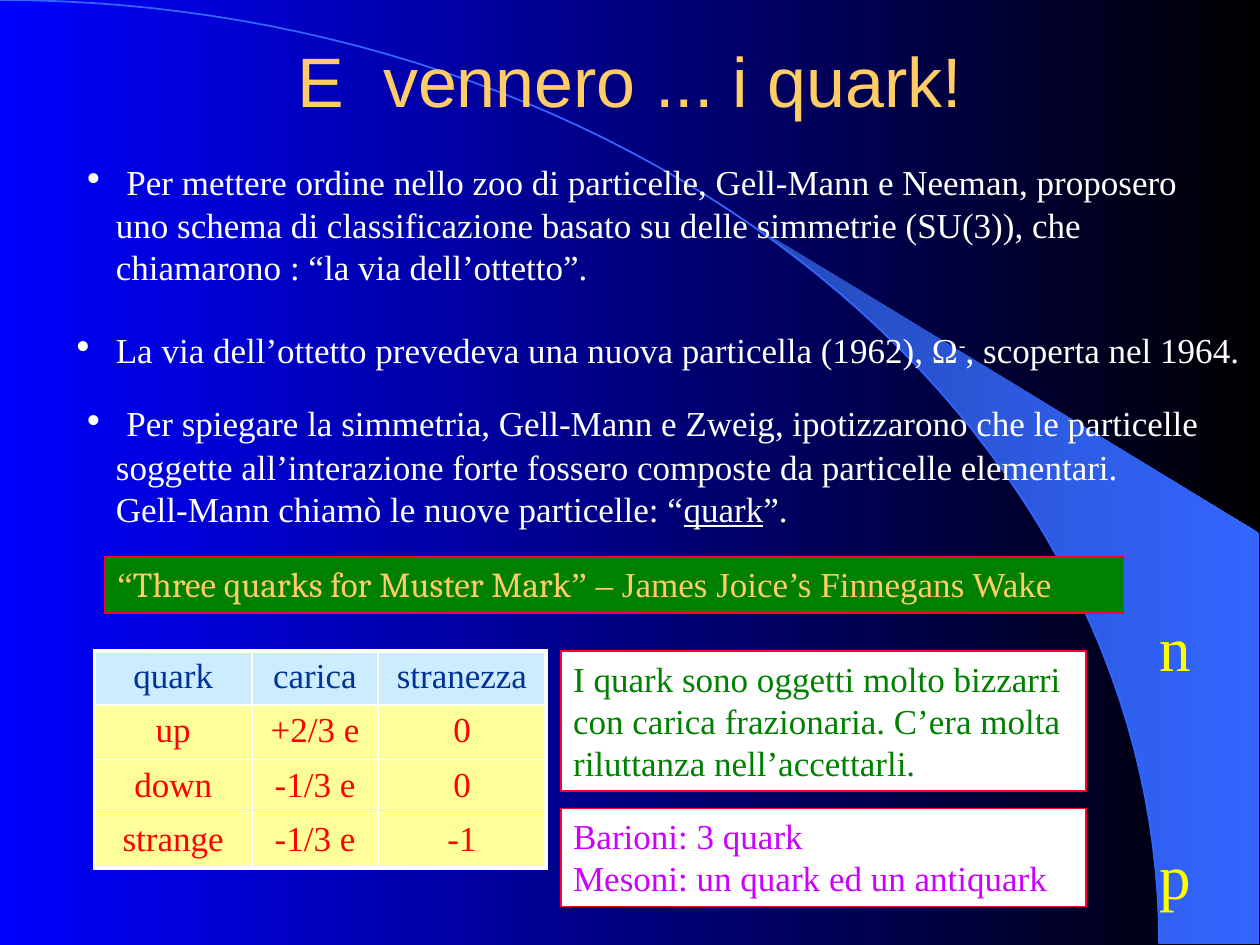
from math import asin, cos, pi, sin

from lxml.etree import SubElement
from pptx import Presentation
from pptx.dml.color import RGBColor
from pptx.enum.shapes import MSO_SHAPE as Shape
from pptx.enum.text import MSO_ANCHOR as Anchor, MSO_AUTO_SIZE as AutoSize, PP_ALIGN as Align
from pptx.oxml import parse_xml
from pptx.oxml.ns import nsdecls, qn
from pptx.util import Pt

COLORS = {
    "blue": "0000FF", "black": "000000", "arc": "3366FF", "deep": "2449B6",
    "gold": "FFCC66", "white": "FFFFFF", "green": "008000", "border": "FF0033",
    "header": "CCECFF", "navy": "003399", "cell": "FFFF99", "red": "FF0000",
    "violet": "CC00FF", "yellow": "FFFF00",
}
WIDTH, HEIGHT = 720, 540
ARC_WIDTH, ARC_HEIGHT = 662.4, 539.3
SERIF = "Times New Roman"

BULLETS = [
    ((42, 84, 648, 84), [
        ("Per mettere ordine nello zoo di particelle, Gell-Mann e Neeman, proposero uno schema di "
         "classificazione basato su delle simmetrie (SU(3)), che chiamarono : “la via dell’ottetto”.", ""),
    ]),
    ((36, 180, 684, 36), [
        ("La via dell’ottetto prevedeva una nuova particella (1962), Ω", ""),
        ("-", "superscript"),
        (", scoperta nel 1964.", ""),
    ]),
    ((42, 222, 660, 84), [
        ("Per spiegare la simmetria, Gell-Mann e Zweig, ipotizzarono che le particelle "
         "soggette all’interazione forte fossero composte da particelle elementari.", ""),
        ("Gell-Mann chiamò le nuove particelle: “", "new line"),
        ("quark", "underline"),
        ("”.", ""),
    ]),
]
QUARKS = [
    ("quark", "carica", "stranezza"),
    ("up", "+2/3 e", "0"),
    ("down", "-1/3 e", "0"),
    ("strange", "-1/3 e", "-1"),
]


def rgb(name):
    return RGBColor.from_string(COLORS[name])


def arc_points(start, steps=60):
    angles = [start + (pi / 2 - start) * step / steps for step in range(steps + 1)]
    return [(ARC_WIDTH * sin(angle), ARC_HEIGHT * (1 - cos(angle))) for angle in angles]


class SlideWriter:
    def __init__(self, slide):
        self.slide = slide

    def gradient(self, fill, first, last):
        fill.gradient()
        fill.gradient_angle = 0
        for stop, name in zip(fill.gradient_stops, (first, last)):
            stop.color.rgb = rgb(name)

    def style(self, span, color, size=20, font=SERIF):
        span.font.name = font
        span.font.size = Pt(size)
        span.font.bold = False
        span.font.color.rgb = rgb(color)

    def place(self, shape, area):
        shape.left, shape.top, shape.width, shape.height = map(Pt, area)

    def space_before(self, para):
        spacing = parse_xml(f'<a:spcBef {nsdecls("a")}><a:spcPct val="50000"/></a:spcBef>')
        para._p.get_or_add_pPr().insert(0, spacing)

    def outline(self, points, closed):
        corners = [(Pt(x), Pt(y)) for x, y in points]
        builder = self.slide.shapes.build_freeform(*corners[0], scale=1.0)
        builder.add_line_segments(corners[1:], close=closed)
        shape = builder.convert_to_shape()
        shape.shadow.inherit = False
        self.slide.shapes._spTree.insert(2, shape._element)
        return shape

    def backdrop(self):
        self.gradient(self.slide.background.fill, "blue", "black")
        arc = self.outline(arc_points(0), closed=False)
        arc.fill.background()
        arc.line.color.rgb = rgb("arc")
        arc.line.width = Pt(1)
        corner = [(719.3, 539.3), (719.3, 304.6)]
        beam = self.outline(arc_points(asin(0.64)) + corner, closed=True)
        self.gradient(beam.fill, "deep", "arc")
        beam.line.fill.background()

    def title(self, text, area):
        box = self.slide.shapes.title
        self.place(box, area)
        frame = box.text_frame
        frame.text = text
        frame.auto_size = AutoSize.NONE
        frame.vertical_anchor = Anchor.MIDDLE
        frame.paragraphs[0].alignment = Align.CENTER
        self.style(frame.paragraphs[0].runs[0], "gold", 40, "Arial")

    def bullet(self, box, area, parts):
        self.place(box, area)
        frame = box.text_frame
        frame.auto_size = AutoSize.NONE
        frame.vertical_anchor = Anchor.TOP
        para = frame.paragraphs[0]
        para.text = " "
        self.style(para.runs[0], "white", 24)
        for text, effect in parts:
            if effect == "new line":
                para.add_line_break()
            span = para.add_run()
            span.text = text
            self.style(span, "white")
            if effect == "underline":
                span.font.underline = True
            if effect == "superscript":
                span.font._element.set("baseline", "30000")
        self.space_before(para)
        settings = para._p.get_or_add_pPr()
        settings.set("marL", str(Pt(17)))
        settings.set("indent", str(-Pt(17)))
        SubElement(settings, qn("a:buFont")).set("typeface", SERIF)
        SubElement(settings, qn("a:buChar")).set("char", "•")

    def text(self, shape, parts, color, size=20):
        frame = shape.text_frame
        frame.word_wrap = True
        frame.vertical_anchor = Anchor.TOP
        para = frame.paragraphs[0]
        para.text = parts[0][0]
        for part, _ in parts[1:]:
            para.add_run().text = part
        para.alignment = Align.LEFT
        fonts = [font for _, font in parts]
        for index, span in enumerate(para.runs):
            self.style(span, color, size, fonts[min(index, len(fonts) - 1)])
        self.space_before(para)

    def panel(self, area, parts, fill, color):
        box = self.slide.shapes.add_shape(Shape.RECTANGLE, *map(Pt, area))
        box.shadow.inherit = False
        box.fill.solid()
        box.fill.fore_color.rgb = rgb(fill)
        box.line.color.rgb = rgb("border")
        box.line.width = Pt(1)
        self.text(box, parts, color)

    def label(self, area, text):
        box = self.slide.shapes.add_textbox(*map(Pt, area))
        self.text(box, [(text, SERIF)], "yellow", 36)

    def table(self, left, top, widths, row_height, rows):
        size = (sum(widths), row_height * len(rows))
        table = self.slide.shapes.add_table(
            len(rows), len(widths), *map(Pt, (left, top, *size))).table
        for column, width in zip(table.columns, widths):
            column.width = Pt(width)
        for r, row in enumerate(rows):
            table.rows[r].height = Pt(row_height)
            for c, text in enumerate(row):
                cell = table.cell(r, c)
                cell.text = text
                cell.fill.solid()
                cell.fill.fore_color.rgb = rgb("cell" if r else "header")
                para = cell.text_frame.paragraphs[0]
                para.alignment = Align.CENTER
                self.style(para.runs[0], "red" if r else "navy")
                outer = (c == 0, c == len(row) - 1, r == 0, r == len(rows) - 1)
                self.borders(cell, outer)

    def borders(self, cell, outer):
        settings = cell._tc.get_or_add_tcPr()
        for index, (side, edge) in enumerate(zip("LRTB", outer)):
            width = Pt(2.25 if edge else 1)
            settings.insert(index, parse_xml(
                f'<a:ln{side} {nsdecls("a")} w="{width}"><a:solidFill>'
                f'<a:srgbClr val="{COLORS["white"]}"/></a:solidFill></a:ln{side}>'))


def main():
    deck = Presentation()
    deck.slide_width, deck.slide_height = Pt(WIDTH), Pt(HEIGHT)
    page = deck.slides.add_slide(deck.slide_layouts.get_by_name("Comparison"))
    writer = SlideWriter(page)
    writer.backdrop()
    writer.title("E  vennero ... i quark!", (54, 20, 612, 50.4))
    _, *bodies, spare = page.placeholders
    spare._element.getparent().remove(spare._element)
    for box, (area, parts) in zip(bodies, BULLETS):
        writer.bullet(box, area, parts)
    writer.panel((60, 318, 582, 32.4), [
        ("“", SERIF),
        ("Three quarks for Muster Mark", "Cambria"),
        ("” – James Joice’s Finnegans Wake", SERIF),
    ], "green", "gold")
    writer.table(54, 372, (90, 72, 96), 31, QUARKS)
    writer.panel((320.4, 372, 300, 80), [
        ("I quark sono oggetti molto bizzarri con carica frazionaria. "
         "C’era molta riluttanza nell’accettarli.", SERIF)], "white", "green")
    writer.panel((320.4, 462, 300, 56), [
        ("Barioni: 3 quark\vMesoni: un quark ed un antiquark", SERIF)], "white", "violet")
    writer.label((655.2, 344, 40, 50.4), "n")
    writer.label((655.2, 474.5, 51, 50.4), "p")
    deck.save("out.pptx")


if __name__ == "__main__":
    main()
